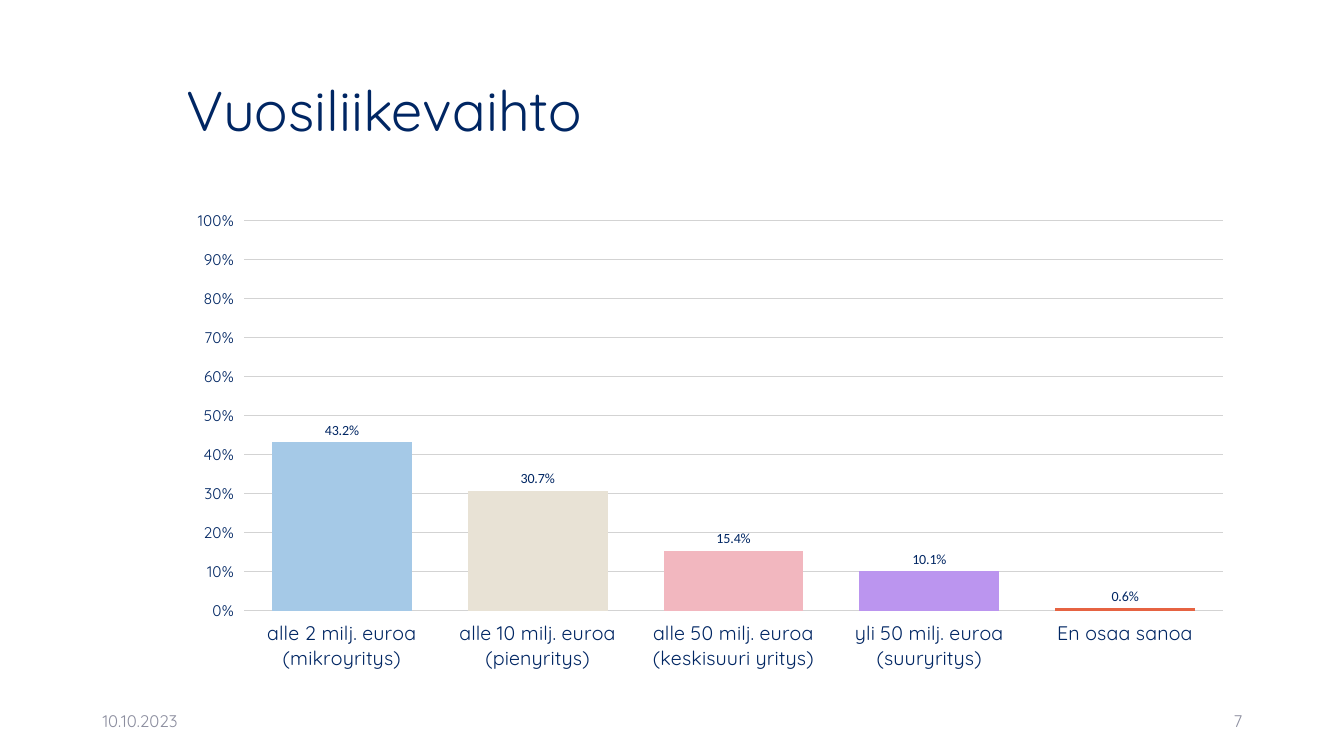
from lxml import etree
from pptx import Presentation
from pptx.chart.data import CategoryChartData
from pptx.dml.color import RGBColor
from pptx.enum.chart import XL_CHART_TYPE, XL_LABEL_POSITION, XL_TICK_MARK
from pptx.enum.text import MSO_ANCHOR, PP_ALIGN
from pptx.oxml.ns import qn
from pptx.util import Inches, Pt

LEFT, RIGHT = PP_ALIGN.LEFT, PP_ALIGN.RIGHT
MIDDLE = MSO_ANCHOR.MIDDLE
COLUMNS = XL_CHART_TYPE.COLUMN_CLUSTERED
ABOVE = XL_LABEL_POSITION.OUTSIDE_END
TICK_OUT = XL_TICK_MARK.OUTSIDE

NAVY, GREY, GRID, WHITE = "002663", "8C8E9F", "D3D3D3", "FFFFFF"
HEADING_FONT, LABEL_FONT = "Quicksand", "Calibri"

TITLE = "Vuosiliikevaihto"
TURNOVER = [  # category, share, colour
    ("alle 2 milj. euroa (mikroyritys)", 0.432, "A5C9E7"),
    ("alle 10 milj. euroa (pienyritys)", 0.307, "E8E2D5"),
    ("alle 50 milj. euroa (keskisuuri yritys)", 0.154, "F2B7BF"),
    ("yli 50 milj. euroa (suuryritys)", 0.101, "BB95EF"),
    ("En osaa sanoa", 0.006, "E66342"),
]
FOOTERS = [("10.10.2023", 0.92, LEFT), ("7", 9.42, RIGHT)]  # text, left, alignment

TITLE_BOX = (1.75, 0.4, 10.59, 1.45)
CHART_BOX = (1.75, 2, 10.59, 4.76)
PLOT_BOX = (2.42, 2.19, 9.71, 3.87)


def rgb(colour):
    return RGBColor.from_string(colour)


def inches(box):
    return [Inches(length) for length in box]


def style(font, size, colour=NAVY, name=HEADING_FONT):
    for attribute, value in {"size": Pt(size), "name": name, "bold": False}.items():
        setattr(font, attribute, value)
    font.color.rgb = rgb(colour)


def fill(part, colour):
    part.fill.solid()
    part.fill.fore_color.rgb = rgb(colour)


def place_plot(chart):
    """Fix the inner plot area at PLOT_BOX, as fractions of the chart."""
    plot_area = chart.element.find(".//" + qn("c:plotArea"))
    for old_layout in plot_area.findall(qn("c:layout")):
        plot_area.remove(old_layout)
    layout = etree.Element(qn("c:layout"))
    manual = etree.SubElement(layout, qn("c:manualLayout"))
    left, top, width, height = CHART_BOX
    x, y, w, h = PLOT_BOX
    settings = {
        "layoutTarget": "inner", "xMode": "edge", "yMode": "edge",
        "x": (x - left) / width, "y": (y - top) / height,
        "w": w / width, "h": h / height,
    }
    for tag, value in settings.items():
        etree.SubElement(manual, qn("c:" + tag)).set("val", str(value))
    plot_area.insert(0, layout)
    background = etree.SubElement(plot_area, qn("c:spPr"))
    solid = etree.SubElement(background, qn("a:solidFill"))
    etree.SubElement(solid, qn("a:srgbClr")).set("val", WHITE)


def add_title(slide):
    title = slide.shapes.title
    title.left, title.top, title.width, title.height = inches(TITLE_BOX)
    title.text_frame.text = TITLE
    title.text_frame.vertical_anchor = MIDDLE
    paragraph = title.text_frame.paragraphs[0]
    paragraph.alignment = LEFT
    paragraph.line_spacing = 0.9
    style(paragraph.runs[0].font, 40)


def add_footer(slide, text, left, alignment):
    frame = slide.shapes.add_textbox(*inches((left, 6.95, 3, 0.4))).text_frame
    frame.word_wrap = True
    frame.vertical_anchor = MIDDLE
    frame.text = text
    frame.paragraphs[0].alignment = alignment
    style(frame.paragraphs[0].runs[0].font, 12, GREY)


def add_turnover_chart(slide):
    categories, shares, colours = zip(*TURNOVER)
    data = CategoryChartData(number_format="0.0%")
    data.categories = categories
    data.add_series("Series 1", shares)
    chart = slide.shapes.add_chart(COLUMNS, *inches(CHART_BOX), data).chart
    chart.has_legend = chart.has_title = False
    style(chart.font, 11, "000000", LABEL_FONT)

    for axis, size in ((chart.category_axis, 14), (chart.value_axis, 11)):
        axis.major_tick_mark = TICK_OUT
        axis.format.line.fill.background()
        style(axis.tick_labels.font, size)
    shares_axis = chart.value_axis
    limits = {"minimum_scale": 0, "maximum_scale": 1, "major_unit": 0.1}
    for attribute, value in limits.items():
        setattr(shares_axis, attribute, value)
    shares_axis.tick_labels.number_format = "0%"
    shares_axis.tick_labels.number_format_is_linked = False
    grid = shares_axis.major_gridlines.format.line
    grid.width = Pt(1)
    grid.color.rgb = rgb(GRID)

    plot = chart.plots[0]
    plot.gap_width, plot.overlap, plot.vary_by_categories = 40, -2, False
    for index, colour in enumerate(colours):
        fill(plot.series[0].points[index].format, colour)
    labels = plot.series[0].data_labels
    label_format = {"show_value": True, "number_format": "0.0%",
                    "number_format_is_linked": False, "position": ABOVE}
    for attribute, value in label_format.items():
        setattr(labels, attribute, value)
    style(labels.font, 10, NAVY, LABEL_FONT)
    place_plot(chart)


def main():
    deck = Presentation()
    deck.slide_width, deck.slide_height = inches((13.33, 7.5))
    slide = deck.slides.add_slide(deck.slide_layouts[5])
    fill(slide.background, WHITE)
    add_title(slide)
    for footer in FOOTERS:
        add_footer(slide, *footer)
    add_turnover_chart(slide)
    deck.save("out.pptx")


if __name__ == "__main__":
    main()
